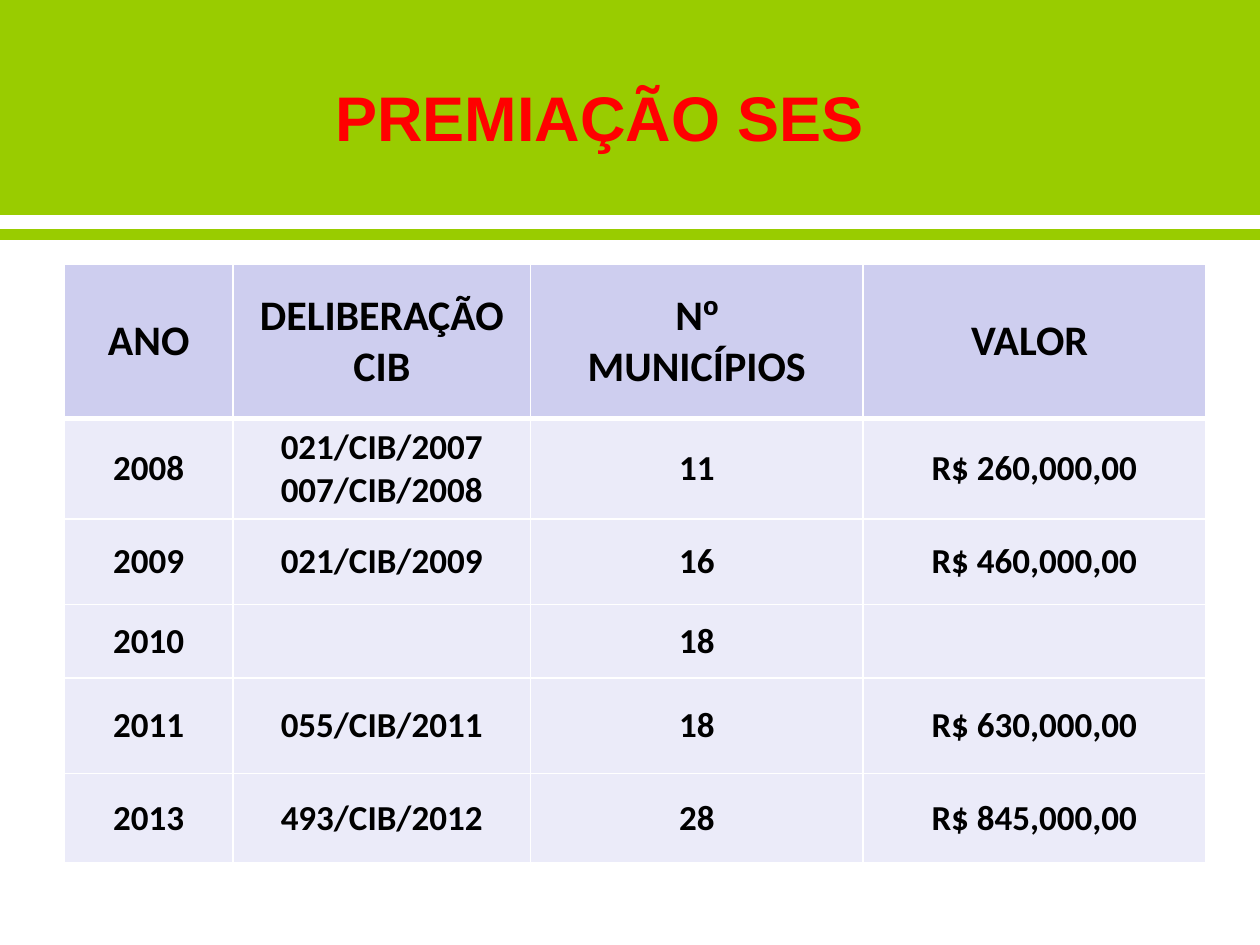
from lxml.etree import SubElement
from pptx import Presentation
from pptx.dml.color import RGBColor
from pptx.enum.shapes import MSO_CONNECTOR as Connector, MSO_SHAPE as Shape
from pptx.enum.text import MSO_ANCHOR as Anchor, MSO_AUTO_SIZE as AutoSize, PP_ALIGN as Align
from pptx.oxml.ns import qn
from pptx.util import Pt

GREEN, RED, BLACK, WHITE = "99CC00", "FF0000", "000000", "FFFFFF"
HEADER_FILL, BODY_FILL = "CECEEF", "EBEBF9"
PAGE_WIDTH, PAGE_HEIGHT = 720, 540
COLUMN_WIDTHS = [96.5, 170, 190, 195.8]
ROW_HEIGHTS = [87.8, 57.6, 49, 41.8, 54.7, 51.1]
ROWS = [
    ["ANO", "DELIBERAÇÃO CIB", "Nº\nMUNICÍPIOS", "VALOR "],
    ["2008", "021/CIB/2007\n007/CIB/2008", "11", "R$ 260,000,00"],
    ["2009", "021/CIB/2009", "16", "R$ 460,000,00"],
    ["2010", "", "18", ""],
    ["2011", "055/CIB/2011", "18", "R$ 630,000,00"],
    ["2013", "493/CIB/2012", "28", "R$ 845,000,00"],
]


def color(value):
    return RGBColor.from_string(value)


def format_font(font, name, size, value):
    font.name, font.size, font.bold = name, Pt(size), True
    font.color.rgb = color(value)


def add_band(page, height):
    band = page.shapes.add_shape(Shape.RECTANGLE, 0, 0, Pt(PAGE_WIDTH), Pt(height))
    band.shadow.inherit = False
    band.fill.solid()
    band.fill.fore_color.rgb = color(GREEN)
    band.line.color.rgb = color(GREEN)
    band.line.width = Pt(0.75)


def add_rule(page, top):
    rule = page.shapes.add_connector(Connector.STRAIGHT, 0, Pt(top), Pt(PAGE_WIDTH), Pt(top))
    rule.line.color.rgb = color(GREEN)
    rule.line.width = Pt(6)
    SubElement(rule.element.spPr, qn("a:effectLst"))


def set_title(page, text):
    title = page.shapes.title
    title.left, title.top, title.width, title.height = Pt(106.6), Pt(21.6), Pt(472.3), Pt(90)
    frame = title.text_frame
    frame.text = text
    frame.auto_size = AutoSize.NONE
    frame.word_wrap = True
    frame.vertical_anchor = Anchor.MIDDLE
    para = frame.paragraphs[0]
    para.alignment = Align.CENTER
    format_font(para.runs[0].font, "Arial", 36, RED)
    # Bring the title in front of the band
    title.element.getparent().append(title.element)


def set_borders(cell, bottom_width):
    properties = cell._tc.get_or_add_tcPr()
    widths = {"a:lnL": 1, "a:lnR": 1, "a:lnT": 1, "a:lnB": bottom_width}
    for position, (tag, width) in enumerate(widths.items()):
        border = SubElement(properties, qn(tag), w=str(Pt(width)))
        fill = SubElement(border, qn("a:solidFill"))
        SubElement(fill, qn("a:srgbClr"), val=WHITE)
        properties.insert(position, border)  # borders come before the fill


def fill_cell(cell, text, is_header):
    cell.fill.solid()
    cell.fill.fore_color.rgb = color(HEADER_FILL if is_header else BODY_FILL)
    cell.vertical_anchor = Anchor.MIDDLE
    set_borders(cell, 3 if is_header else 1)
    cell.text_frame.text = text
    for para in cell.text_frame.paragraphs:
        para.alignment = Align.CENTER
        parts = para.text.partition("º")
        para.text = ""
        for part in filter(None, parts):
            span = para.add_run()
            span.text = part
            format_font(span.font, "Arial" if part == "º" else "Calibri",
                        24 if is_header else 20, BLACK)


def add_award_table(page):
    frame = page.shapes.add_table(len(ROWS), len(COLUMN_WIDTHS), Pt(36.7), Pt(151.2),
                                  Pt(sum(COLUMN_WIDTHS)), Pt(sum(ROW_HEIGHTS)))
    table = frame.table
    table.first_row = table.horz_banding = False
    for column, width in zip(table.columns, COLUMN_WIDTHS):
        column.width = Pt(width)
    for index, (row, height) in enumerate(zip(table.rows, ROW_HEIGHTS)):
        row.height = Pt(height)
        for cell, text in zip(row.cells, ROWS[index]):
            fill_cell(cell, text, index == 0)


def main():
    deck = Presentation()
    deck.slide_width, deck.slide_height = Pt(PAGE_WIDTH), Pt(PAGE_HEIGHT)
    page = deck.slides.add_slide(deck.slide_layouts[5])
    # Header
    add_band(page, 122.4)
    add_rule(page, 133.9)
    # Awards by year
    add_award_table(page)
    set_title(page, "PREMIAÇÃO SES")
    deck.save("out.pptx")


if __name__ == "__main__":
    main()
